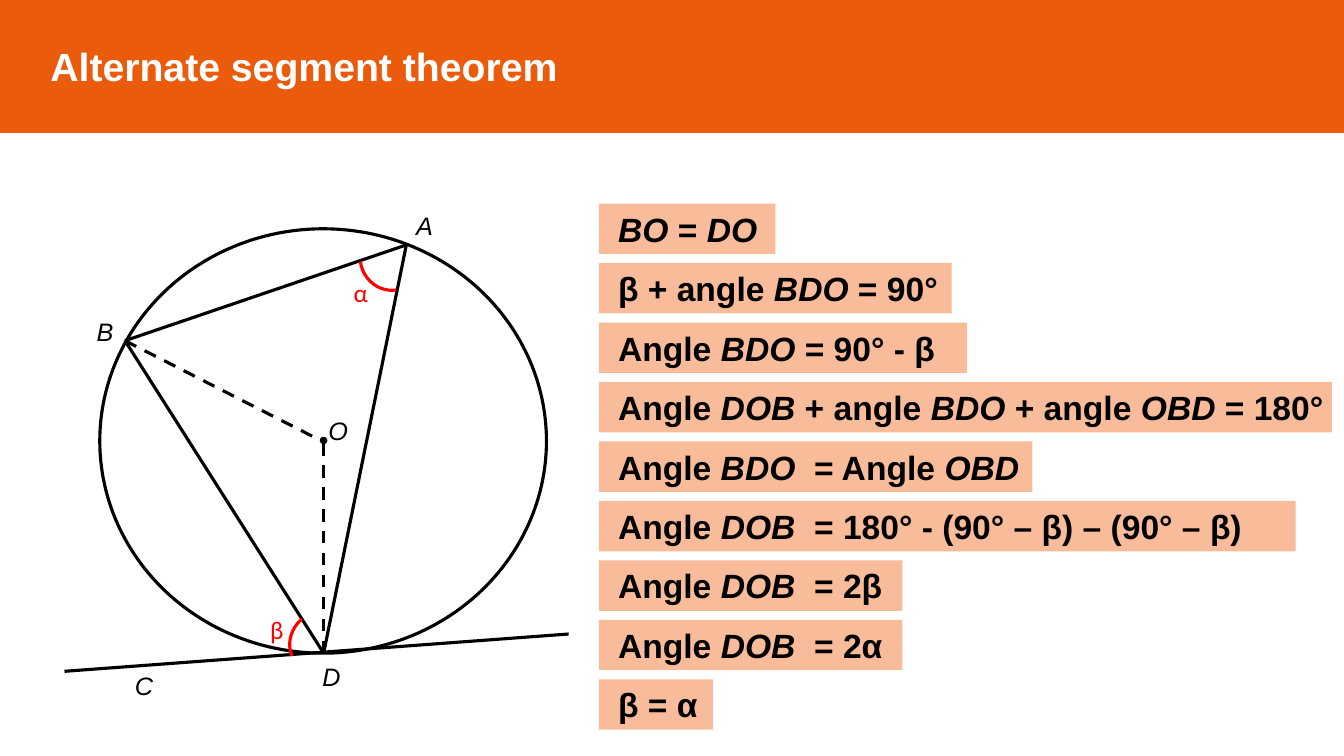
"""Build a slide that proves the alternate segment theorem."""
from lxml import etree
from pptx import Presentation
from pptx.dml.color import RGBColor
from pptx.enum.dml import MSO_LINE
from pptx.enum.shapes import MSO_CONNECTOR, MSO_SHAPE
from pptx.enum.text import MSO_ANCHOR, PP_ALIGN
from pptx.oxml.ns import qn
from pptx.util import Inches, Pt

RECT, OVAL, ARC = MSO_SHAPE.RECTANGLE, MSO_SHAPE.OVAL, MSO_SHAPE.ARC
STRAIGHT, DASH = MSO_CONNECTOR.STRAIGHT, MSO_LINE.DASH
TOP, MIDDLE, LEFT = MSO_ANCHOR.TOP, MSO_ANCHOR.MIDDLE, PP_ALIGN.LEFT

ORANGE = RGBColor(0xEA, 0x5B, 0x0C)
PEACH = RGBColor(0xF9, 0xBC, 0x9A)
RED = RGBColor(0xFF, 0x00, 0x00)
BLACK = RGBColor(0x00, 0x00, 0x00)
WHITE = RGBColor(0xFF, 0xFF, 0xFF)

A, B, D = (4.03, 2.43), (1.24, 3.38), (3.21, 6.48)
TANGENT = (0.64, 6.66), (5.64, 6.29)
RADII = (D, (3.21, 4.4)), (B, (3.18, 4.37))

POINT_LABELS = [
    ("A", 4.03, 2.04), ("B", 0.86, 3.09), ("C", 1.24, 6.6),
    ("D", 3.1, 6.51), ("O", 3.16, 4.07),
]
ANGLE_LABELS = [("α", 3.41, 2.7), ("β", 2.58, 6.05)]
ANGLE_ARCS = [
    (2.89, 6.04, 248.3, 161.8, 203.89),
    (3.57, 2.2, 184.3, 155.71, 207.7),
]
STEPS = [
    ("*BO* = *DO*", 1.75),
    ("β + angle *BDO* = 90°", 3.5),
    ("Angle *BDO* = 90° - β", 3.65),
    ("Angle *DOB* + angle *BDO* + angle *OBD* = 180°", 7.27),
    ("Angle *BDO*  = Angle *OBD*", 4.3),
    ("Angle *DOB*  = 180° - (90° – β) – (90° – β)", 6.91),
    ("Angle *DOB*  = 2β", 3.01),
    ("Angle *DOB*  = 2α", 3.01),
    ("β = α", 1.13),
]
STEP_LEFT, STEP_TOP, STEP_PITCH, STEP_HEIGHT = 5.94, 2.02, 0.59, 0.5


class Board:
    """Hold the slide and its drawing style."""

    font = "Arial"
    stroke = 2.25

    def __init__(self, s):
        self.shapes = s.shapes

    def shape(self, kind, x, y, w, h, fill=None, line=None, width=stroke):
        sp = self.shapes.add_shape(kind, Inches(x), Inches(y), Inches(w), Inches(h))
        sp.shadow.inherit = False
        if fill is None:
            sp.fill.background()
        else:
            sp.fill.solid()
            sp.fill.fore_color.rgb = fill
        if line is None:
            sp.line.fill.background()
        else:
            sp.line.color.rgb = line
            sp.line.width = Pt(width)
        return sp

    def arc(self, x, y, rotation, start, end):
        sp = self.shape(ARC, x, y, 0.64, 0.68, line=RED)
        sp.rotation = rotation
        sp.adjustments[0] = start
        sp.adjustments[1] = end

    def line(self, start, end, dash=None):
        ends = [Inches(v) for v in (*start, *end)]
        cxn = self.shapes.add_connector(STRAIGHT, *ends)
        cxn.line.color.rgb = BLACK
        cxn.line.width = Pt(self.stroke)
        if dash is not None:
            cxn.line.dash_style = dash
        etree.SubElement(cxn._element.spPr, qn("a:effectLst"))

    def text(self, sp, text, size, color, bold, indent, anchor=TOP):
        tf = sp.text_frame
        tf.word_wrap = True
        tf.vertical_anchor = anchor
        tf.margin_left, tf.margin_right = Inches(indent), 0
        p = tf.paragraphs[0]
        p.alignment = LEFT
        p.font.name, p.font.size = self.font, Pt(size)
        p.font.bold, p.font.color.rgb = bold, color
        for i, part in enumerate(text.split("*")):
            if part:
                r = p.add_run()
                r.text = part
                if i % 2:
                    r.font.italic = True
        return p

    def label(self, text, x, y, color=BLACK):
        sp = self.shapes.add_textbox(Inches(x), Inches(y), Inches(0.26), Inches(0.4))
        return self.text(sp, text, 18, color, False, 0.1)


def main():
    prs = Presentation()
    prs.slide_width, prs.slide_height = Inches(13.33), Inches(7.5)
    board = Board(prs.slides.add_slide(prs.slide_layouts[6]))

    banner = board.shape(RECT, 0, -0.01, 13.33, 1.32, ORANGE, ORANGE, 1)
    board.text(banner, "Alternate segment theorem", 28, WHITE, True, 0.5, MIDDLE)

    board.shape(OVAL, 0.99, 2.27, 4.43, 4.21, WHITE, BLACK)
    board.shape(OVAL, 3.18, 4.34, 0.06, 0.06, BLACK, BLACK, 1)
    for start, end in [(B, D), (B, A), (A, D), TANGENT]:
        board.line(start, end)
    for start, end in RADII:
        board.line(start, end, DASH)
    for arc in ANGLE_ARCS:
        board.arc(*arc)
    for name, x, y in ANGLE_LABELS:
        board.label(name, x, y, RED).font.name = "Calibri"
    for name, x, y in POINT_LABELS:
        board.label(name, x, y).font.italic = True

    for i, (step, width) in enumerate(STEPS):
        top = STEP_TOP + i * STEP_PITCH
        sp = board.shape(RECT, STEP_LEFT, top, width, STEP_HEIGHT, PEACH)
        board.text(sp, step, 24, BLACK, True, 0.19)

    prs.save("out.pptx")


if __name__ == "__main__":
    main()
